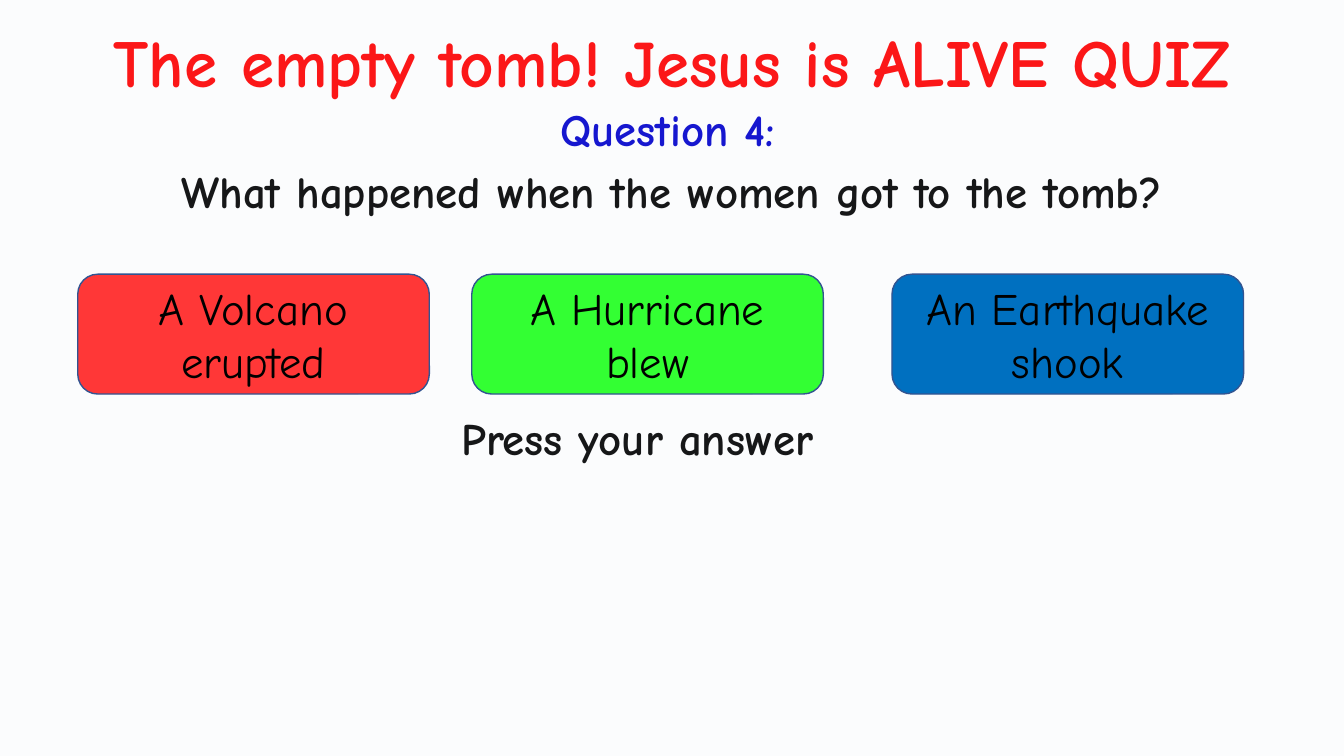
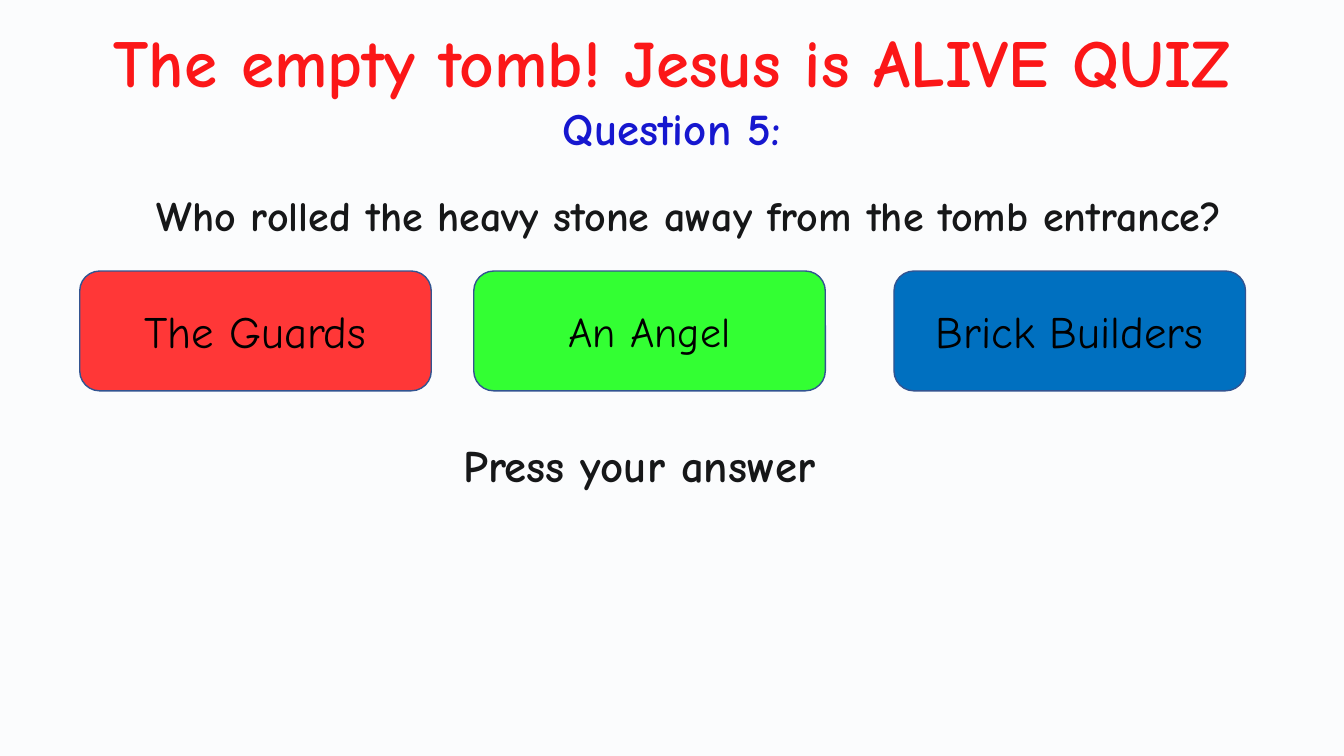
from lxml.etree import SubElement
from pptx import Presentation
from pptx.dml.color import RGBColor
from pptx.enum.shapes import MSO_SHAPE
from pptx.enum.text import MSO_ANCHOR, PP_ALIGN
from pptx.oxml.ns import qn
from pptx.util import Cm, Pt

WIDE, HIGH = 33.87, 19.05
HUES = {
    "title": "FF0000", "label": "0000CC", "text": "000000",
    "tint": "DAE3F3", "edge": "325491",
    "red": "FF3737", "green": "33FF33", "blue": "0070C0",
}
CARDS = {"red": 1.96, "green": 11.89, "blue": 22.48}


def hue(name):
    return RGBColor.from_string(HUES[name])


def dress(item, values):
    """Set each named attribute of item."""
    for name, value in values.items():
        setattr(item, name, value)


class Quiz:
    face = {"name": "Comic Neue", "size": Pt(32), "bold": True}
    frame = {"word_wrap": True, "vertical_anchor": MSO_ANCHOR.TOP}

    def __init__(self):
        self.deck = Presentation()
        dress(self.deck, {"slide_width": Cm(WIDE), "slide_height": Cm(HIGH)})
        self.slide = None

    def letter(self, shape, text, color="text", font=None, para=None, frame=None):
        """Fill a shape with one styled paragraph, centred by default."""
        body = shape.text_frame
        dress(body, self.frame | (frame or {}))
        line = body.paragraphs[0]
        line.text = text
        dress(line, {"alignment": PP_ALIGN.CENTER} | (para or {}))
        dress(line.font, self.face | (font or {}))
        line.font.color.rgb = hue(color)

    def label(self, box, text, **style):
        shape = self.slide.shapes.add_textbox(*map(Cm, box))
        self.letter(shape, text, **style)

    def block(self, kind, box, color):
        shape = self.slide.shapes.add_shape(kind, *map(Cm, box))
        shape.shadow.inherit = False
        shape.fill.solid()
        shape.fill.fore_color.rgb = hue(color)
        return shape

    def tint(self):
        """Lay a faint wash over the slide."""
        shape = self.block(MSO_SHAPE.RECTANGLE, (0, 0, WIDE, HIGH), "tint")
        shape.line.fill.background()
        tone = shape.element.find(".//" + qn("a:srgbClr"))
        SubElement(tone, qn("a:alpha"), val="10000")

    def card(self, left, top, color, text, size):
        shape = self.block(MSO_SHAPE.ROUNDED_RECTANGLE,
                           (left, top, 8.86, 3.02), color)
        shape.line.color.rgb = hue("edge")
        shape.line.width = Pt(1)
        self.letter(shape, text, font={"bold": False, "size": Pt(size)},
                    frame={"vertical_anchor": MSO_ANCHOR.MIDDLE})

    def page(self, count, head, ask, box, size, pitch, press, top, shift, picks):
        """Add one question; shift moves the press line and cards right."""
        self.slide = self.deck.slides.add_slide(self.deck.slide_layouts[6])
        self.label((0, 0.38, WIDE, 2.31), "The empty tomb! Jesus is ALIVE QUIZ",
                   color="title", font={"size": Pt(48)})
        self.label(box, ask, font={"size": Pt(size)},
                   para={"line_spacing": Pt(pitch), "space_before": Pt(10)})
        self.label((11.38 + shift, press, 17.09, 1.83), "Press your answer",
                   para={"alignment": PP_ALIGN.LEFT, "line_spacing": 0.9,
                         "space_before": Pt(7.5)})
        self.label((*head, 11.2, 1.63), f"Question {count}:", color="label")
        self.tint()
        for (color, left), (text, points) in zip(CARDS.items(), picks):
            self.card(left + shift, top, color, text, points)


def main():
    quiz = Quiz()
    quiz.page(4, (11.23, 2.44), "What happened when the women got to the tomb?",
              box=(0.94, 4.06, 32, 3.02), size=32, pitch=37,
              press=10.39, top=6.91, shift=0,
              picks=[("A Volcano erupted", 32), ("A Hurricane blew", 32),
                     ("An Earthquake shook", 32)])
    quiz.page(5, (11.33, 2.41),
              "Who rolled the heavy stone away from the tomb entrance?",
              box=(1.65, 4.5, 31.45, 3.02), size=30, pitch=40,
              press=11.05, top=6.83, shift=0.05,
              picks=[("The Guards", 32), ("An Angel", 30),
                     ("Brick Builders", 32)])
    quiz.deck.save("out.pptx")


if __name__ == "__main__":
    main()
